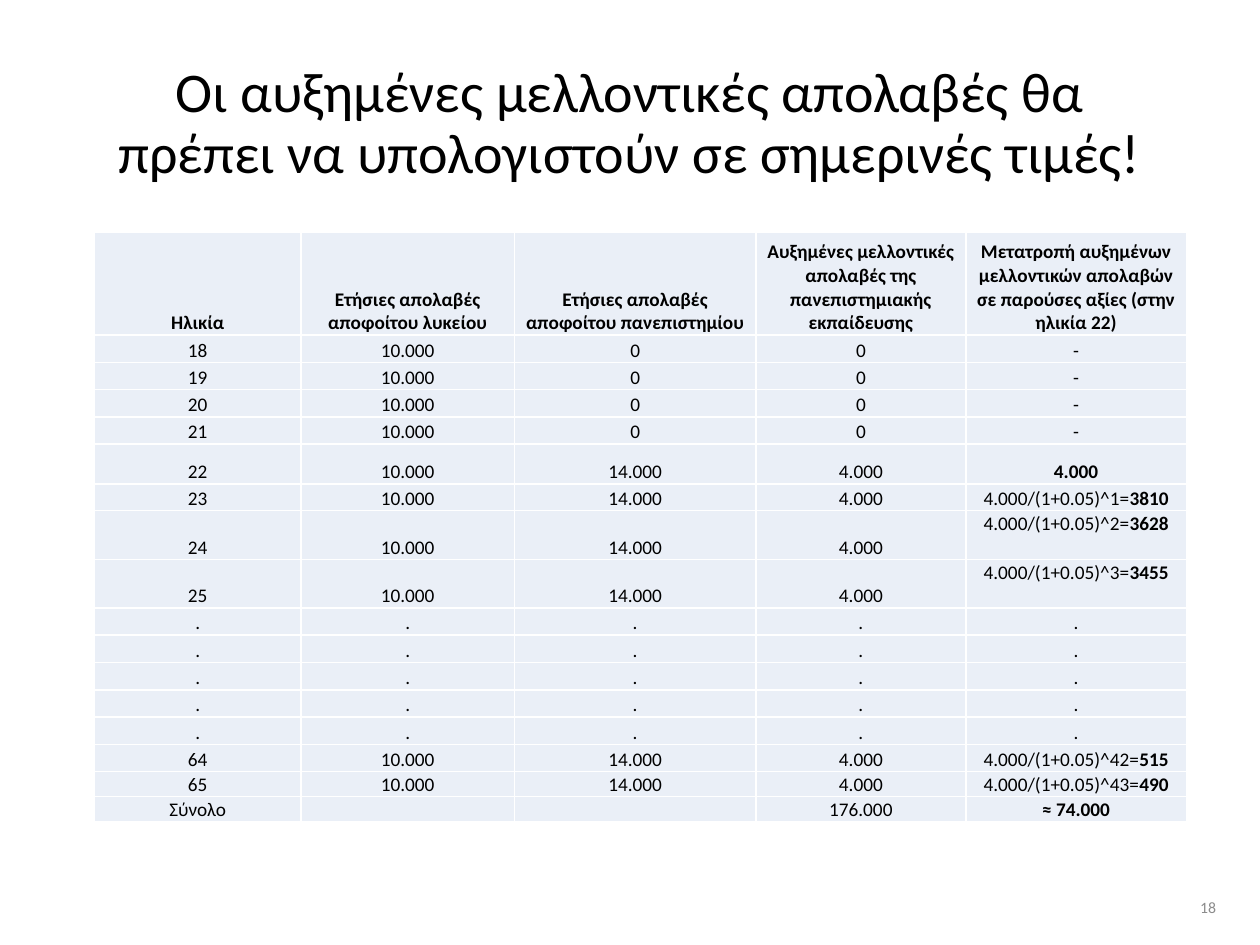
from lxml import etree
from pptx import Presentation
from pptx.dml.color import RGBColor
from pptx.enum.text import MSO_ANCHOR, MSO_AUTO_SIZE, PP_ALIGN
from pptx.oxml.ns import qn
from pptx.util import Pt

CENTER, RIGHT = PP_ALIGN.CENTER, PP_ALIGN.RIGHT
TOP, MIDDLE, BOTTOM = MSO_ANCHOR.TOP, MSO_ANCHOR.MIDDLE, MSO_ANCHOR.BOTTOM
NO_FIT = MSO_AUTO_SIZE.NONE


def color(value):
    return RGBColor.from_string(value)


def write(para, text, size=11, bold=False, fill="000000", align=CENTER):
    para.alignment = align
    span = para.add_run()
    span.text = text
    span.font.name = "Calibri"
    span.font.size = Pt(size)
    span.font.bold = bold
    span.font.color.rgb = color(fill)


deck = Presentation()
deck.slide_width, deck.slide_height = Pt(720), Pt(540)
page = deck.slides.add_slide(deck.slide_layouts[5])

title = page.shapes.title
title.left, title.top, title.width, title.height = Pt(49.5), Pt(28.75), Pt(621), Pt(85)
title.text_frame.auto_size = NO_FIT
title.text_frame.word_wrap = True
title.text_frame.vertical_anchor = MIDDLE
para = title.text_frame.paragraphs[0]
para.line_spacing = 0.9
write(para, "Οι αυξημένες μελλοντικές απολαβές θα πρέπει να υπολογιστούν σε σημερινές τιμές!", size=32)

headings = [
    "Ηλικία",
    "Ετήσιες απολαβές αποφοίτου λυκείου",
    "Ετήσιες απολαβές αποφοίτου πανεπιστημίου",
    "Αυξημένες μελλοντικές απολαβές της πανεπιστημιακής εκπαίδευσης",
    "Μετατροπή αυξημένων μελλοντικών απολαβών σε παρούσες αξίες (στην ηλικία 22)",
]
present_values = [
    ("22", "4.000"),
    ("23", "4.000/(1+0.05)^1=3810"),
    ("24", "4.000/(1+0.05)^2=3628"),
    ("25", "4.000/(1+0.05)^3=3455"),
    ("64", "4.000/(1+0.05)^42=515"),
    ("65", "4.000/(1+0.05)^43=490"),
]
school_rows = [[str(age), "10.000", "0", "0", "-"] for age in range(18, 22)]
work_rows = [[age, "10.000", "14.000", "4.000", value] for age, value in present_values]
dot_rows = [["."] * 5 for _ in range(5)]
total_row = ["Σύνολο", "", "", "176.000", "≈ 74.000"]
rows = [headings, *school_rows, *work_rows[:4], *dot_rows, *work_rows[4:], total_row]

column_widths = [118, 122, 138, 120, 126]
row_heights = [59] + [15.6] * 4 + [22.6, 15.4, 27.8, 27.8] + [15.6] * 6 + [14.3] * 2

frame = page.shapes.add_table(len(rows), len(headings), Pt(54), Pt(132.5),
                              Pt(sum(column_widths)), Pt(sum(row_heights)))
table = frame.table
table.first_row = False
table.horz_banding = False
for column, width in zip(table.columns, column_widths):
    column.width = Pt(width)
for row, height in zip(table.rows, row_heights):
    row.height = Pt(height)

for row_index, values in enumerate(rows):
    for column_index, text in enumerate(values):
        cell = table.cell(row_index, column_index)
        cell.margin_left = cell.margin_right = cell.margin_top = Pt(0.7)
        cell.margin_bottom = 0
        cell.vertical_anchor = TOP if text.endswith(("3628", "3455")) else BOTTOM
        properties = cell._tc.get_or_add_tcPr()
        for side in ("a:lnL", "a:lnR", "a:lnT", "a:lnB"):
            line = etree.SubElement(properties, qn(side), w=str(Pt(1)))
            solid = etree.SubElement(line, qn("a:solidFill"))
            etree.SubElement(solid, qn("a:srgbClr"), val="FFFFFF")
        cell.fill.solid()
        cell.fill.fore_color.rgb = color("EAEFF7")

        para = cell.text_frame.paragraphs[0]
        formula, equals, result = text.rpartition("=")
        if equals:
            write(para, formula + equals)
        if result:
            is_result = column_index == 4 and result not in ("-", ".")
            write(para, result, bold=row_index == 0 or is_result)
        else:
            etree.SubElement(para._p, qn("a:endParaRPr"), sz="1100")

box = page.shapes.add_textbox(Pt(540), Pt(504), Pt(162), Pt(28.75))
box.text_frame.word_wrap = True
box.text_frame.vertical_anchor = MIDDLE
write(box.text_frame.paragraphs[0], "18", size=9, fill="8C8C8C", align=RIGHT)

deck.save("out.pptx")
